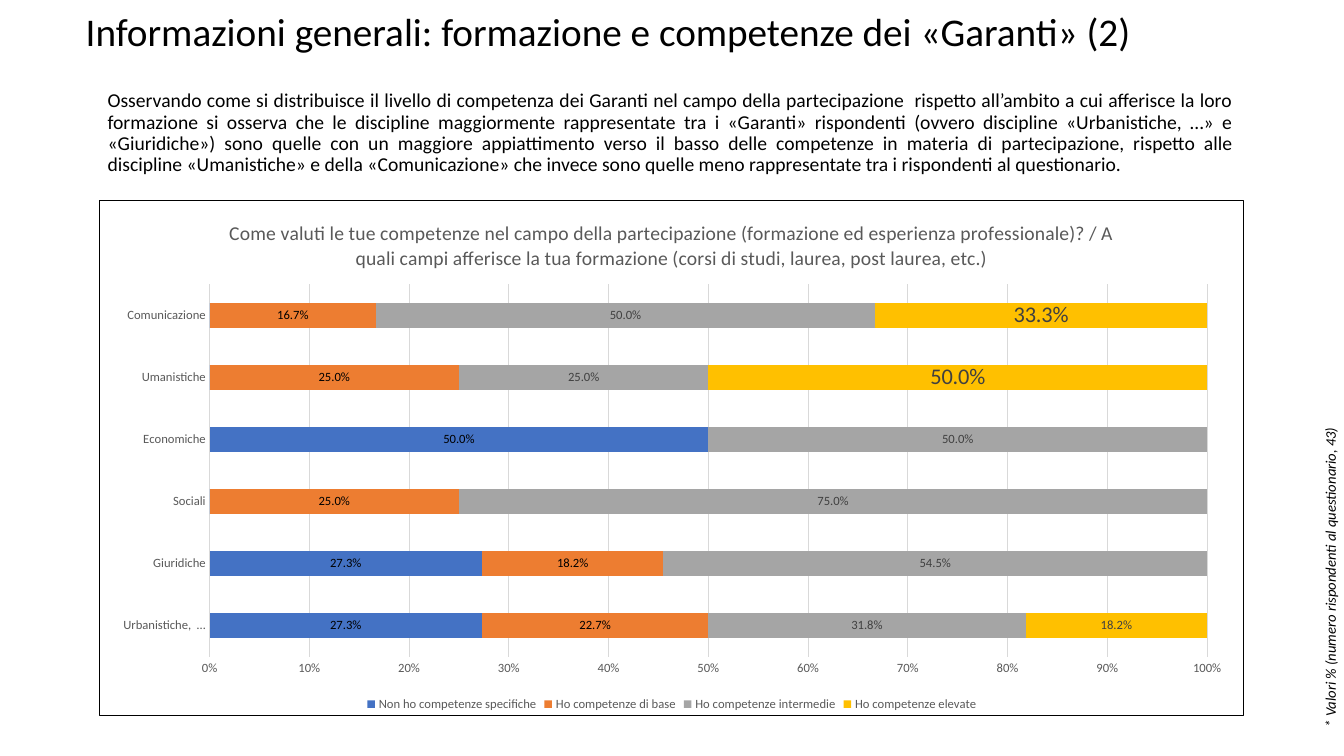
from dataclasses import dataclass

from lxml import etree
from pptx import Presentation
from pptx import util as u
from pptx.chart.data import CategoryChartData
from pptx.dml.color import RGBColor
from pptx.enum import chart as charts, text
from pptx.oxml import parse_xml
from pptx.oxml.ns import nsdecls, qn


@dataclass(frozen=True)
class Theme:
    font: str = "Calibri"
    ink: str = "000000"
    label: str = "404040"
    muted: str = "595959"
    grid: str = "D9D9D9"
    title: float = 28
    body: float = 14
    note: float = 10.5
    chart_title: float = 14
    chart_text: float = 9
    emphasis: float = 16
    line: float = 0.75


THEME = Theme()

TITLE = "Informazioni generali: formazione e competenze dei «Garanti» (2)"
BODY = (
    "Osservando come si distribuisce il livello di competenza dei Garanti nel campo "
    "della partecipazione  rispetto all’ambito a cui afferisce la loro formazione si "
    "osserva che le discipline maggiormente rappresentate tra i «Garanti» rispondenti "
    "(ovvero discipline «Urbanistiche, …» e «Giuridiche») sono quelle con un maggiore "
    "appiattimento verso il basso delle competenze in materia di partecipazione, "
    "rispetto alle discipline «Umanistiche» e della «Comunicazione» che invece sono "
    "quelle meno rappresentate tra i rispondenti al questionario."
)
NOTE = "* Valori % (numero rispondenti al questionario, 43)"
CHART_TITLE = (
    "Come valuti le tue competenze nel campo della partecipazione (formazione ed "
    "esperienza professionale)? / A quali campi afferisce la tua formazione (corsi di "
    "studi, laurea, post laurea, etc.)"
)
FIELDS = ["Urbanistiche,  …", "Giuridiche", "Sociali", "Economiche", "Umanistiche", "Comunicazione"]
# Level name, shares by field, bar colour, label colour
LEVELS = [
    ("Non ho competenze specifiche", [0.273, 0.273, 0, 0.5, 0, 0], "4472C4", THEME.ink),
    ("Ho competenze di base", [0.227, 0.182, 0.25, 0, 0.25, 0.167], "ED7D31", THEME.ink),
    ("Ho competenze intermedie", [0.318, 0.545, 0.75, 0.5, 0.25, 0.5], "A5A5A5", THEME.label),
    ("Ho competenze elevate", [0.182, 0, 0, 0, 0.5, 0.333], "FFC000", THEME.label),
]
EMPHASISED = ("Umanistiche", "Comunicazione")
SHARE_FORMAT = "0.0%;;"  # the empty sections leave zero shares unlabelled


def style_font(font, size, color, italic=False):
    font.name = THEME.font
    font.size = u.Pt(size)
    font.bold = False
    font.italic = italic
    font.color.rgb = RGBColor.from_string(color)


def style_line(line, color):
    line.color.rgb = RGBColor.from_string(color)
    line.width = u.Pt(THEME.line)


def place(shape, left, top, width, height):
    shape.left, shape.top = u.Pt(left), u.Pt(top)
    shape.width, shape.height = u.Pt(width), u.Pt(height)


def write(frame, words, size, align=text.PP_ALIGN.LEFT, spacing=None, italic=False):
    """Fill a text frame with one styled paragraph."""
    frame.auto_size = text.MSO_AUTO_SIZE.NONE
    frame.word_wrap = True
    frame.vertical_anchor = text.MSO_ANCHOR.MIDDLE
    para = frame.paragraphs[0]
    para.alignment = align
    para.line_spacing = spacing
    span = para.add_run()
    span.text = words
    style_font(span.font, size, THEME.ink, italic)


def add_title(page):
    title = page.shapes.title
    place(title, 54, 6.5, 828, 36)
    write(title.text_frame, TITLE, THEME.title, spacing=0.9)


def add_body(page):
    box = page.shapes.add_textbox(u.Pt(69.8), u.Pt(47.8), u.Pt(818.6), u.Pt(95))
    write(box.text_frame, BODY, THEME.body, text.PP_ALIGN.JUSTIFY, 0.9)


def add_side_note(page):
    box = page.shapes.add_textbox(u.Pt(833.8), u.Pt(400.3), u.Pt(232.6), u.Pt(20.2))
    box.rotation = 270
    write(box.text_frame, NOTE, THEME.note, italic=True)
    box.text_frame.word_wrap = False
    box.text_frame.auto_size = text.MSO_AUTO_SIZE.SHAPE_TO_FIT_TEXT


def frame_chart(chart):
    """Outline the chart area, which has no public line format."""
    border = parse_xml(
        f'<c:spPr {nsdecls("c", "a")}><a:solidFill><a:srgbClr val="FFFFFF"/></a:solidFill>'
        f'<a:ln w="{u.Pt(THEME.line)}"><a:solidFill><a:srgbClr val="{THEME.ink}"/>'
        "</a:solidFill></a:ln></c:spPr>"
    )
    chart._chartSpace.find(qn("c:chart")).addnext(border)


def set_plot_layout(chart, **fractions):
    """Place the inner plot area by fractions of the chart's size."""
    plot_area = chart._chartSpace.find(qn("c:chart")).find(qn("c:plotArea"))
    for old in plot_area.findall(qn("c:layout")):
        plot_area.remove(old)
    layout = etree.Element(qn("c:layout"))
    manual = etree.SubElement(layout, qn("c:manualLayout"))
    settings = {"layoutTarget": "inner", "xMode": "edge", "yMode": "edge", **fractions}
    for name, value in settings.items():
        etree.SubElement(manual, qn(f"c:{name}")).set("val", str(value))
    plot_area.insert(0, layout)


def style_axes(chart):
    for axis in (chart.category_axis, chart.value_axis):
        axis.major_tick_mark = axis.minor_tick_mark = charts.XL_TICK_MARK.NONE
        style_font(axis.tick_labels.font, THEME.chart_text, THEME.muted)
    style_line(chart.category_axis.format.line, THEME.grid)
    shares = chart.value_axis
    shares.minimum_scale, shares.maximum_scale, shares.major_unit = 0, 1, 0.1
    shares.tick_labels.number_format = "0%"
    shares.tick_labels.number_format_is_linked = False
    shares.format.line.fill.background()
    style_line(shares.major_gridlines.format.line, THEME.grid)


def style_level(series, color, label_color):
    series.format.fill.solid()
    series.format.fill.fore_color.rgb = RGBColor.from_string(color)
    labels = series.data_labels
    labels.show_value = True
    labels.position = charts.XL_LABEL_POSITION.CENTER
    labels.number_format = SHARE_FORMAT
    labels.number_format_is_linked = False
    style_font(labels.font, THEME.chart_text, label_color)


def add_competence_chart(page):
    data = CategoryChartData(number_format="0.0%")
    data.categories = FIELDS
    for name, shares, _, _ in LEVELS:
        data.add_series(name, shares)
    chart = page.shapes.add_chart(
        charts.XL_CHART_TYPE.BAR_STACKED,
        u.Pt(70.9), u.Pt(142.9), u.Pt(817.9), u.Pt(368.6), data,
    ).chart
    style_font(chart.font, 10, THEME.ink)
    frame_chart(chart)
    set_plot_layout(chart, x=0.096, y=0.163, w=0.872, h=0.723)

    para = chart.chart_title.text_frame.paragraphs[0]
    span = para.add_run()
    span.text = CHART_TITLE
    style_font(span.font, THEME.chart_title, THEME.muted)
    chart.chart_title.include_in_layout = False

    chart.has_legend = True
    chart.legend.position = charts.XL_LEGEND_POSITION.BOTTOM
    chart.legend.include_in_layout = False
    style_font(chart.legend.font, THEME.chart_text, THEME.muted)

    style_axes(chart)
    plot = chart.plots[0]
    plot.gap_width, plot.overlap = 150, 100
    plot.vary_by_categories = False
    for series, (_, _, color, label_color) in zip(plot.series, LEVELS):
        style_level(series, color, label_color)
    for field in EMPHASISED:
        label = plot.series[-1].points[FIELDS.index(field)].data_label
        style_font(label.font, THEME.emphasis, THEME.label)
        label.position = charts.XL_LABEL_POSITION.CENTER


def main():
    deck = Presentation()
    deck.slide_width, deck.slide_height = u.Pt(960), u.Pt(540)
    page = deck.slides.add_slide(deck.slide_layouts.get_by_name("Title Only"))
    add_title(page)
    add_side_note(page)
    add_body(page)
    add_competence_chart(page)
    deck.save("out.pptx")


if __name__ == "__main__":
    main()
